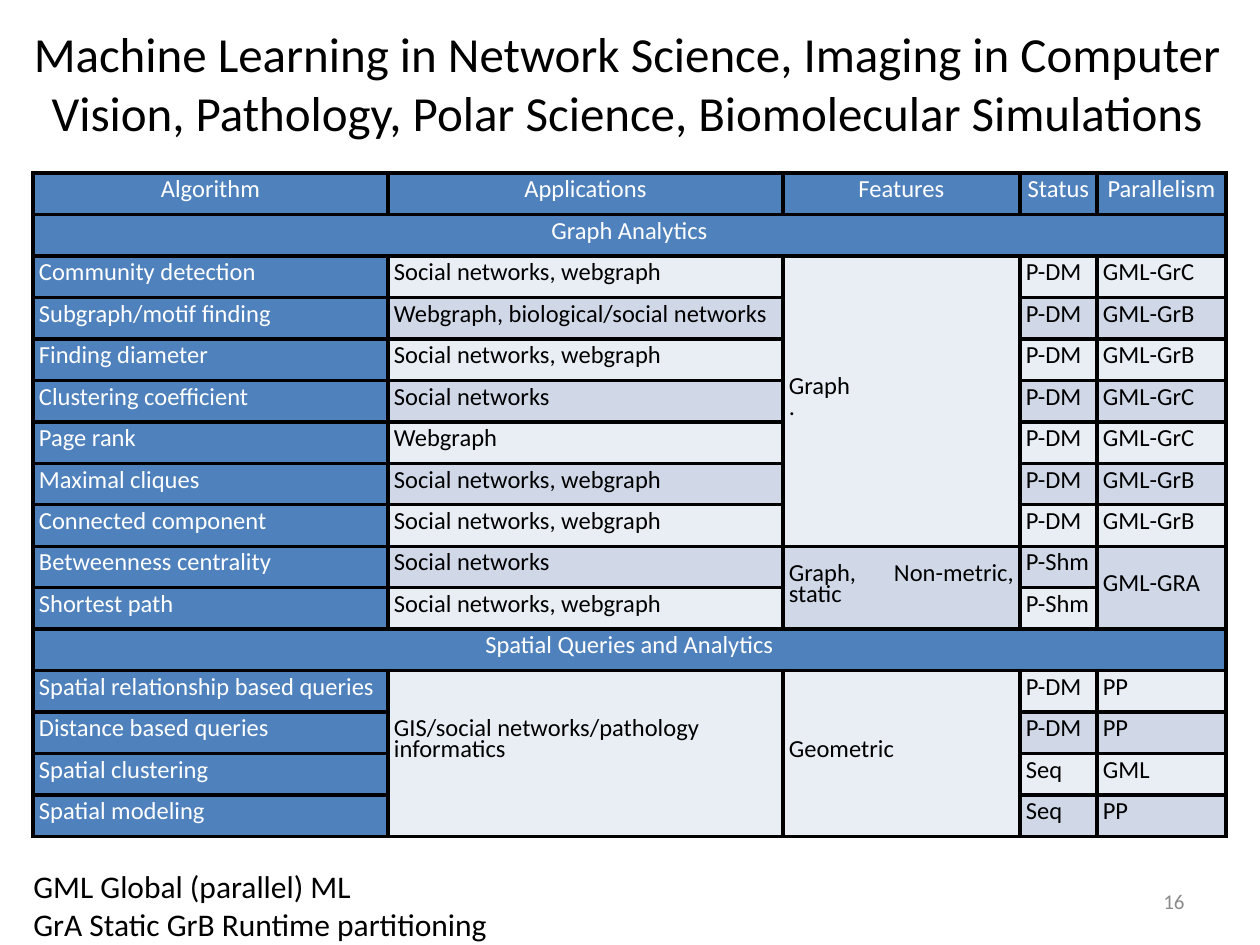
from dataclasses import dataclass

from lxml import etree
from pptx import Presentation
from pptx import util as u
from pptx.dml.color import RGBColor
from pptx.enum import text
from pptx.oxml.ns import qn

LEFT, CENTER, RIGHT, JUSTIFY = (
    text.PP_ALIGN.LEFT, text.PP_ALIGN.CENTER, text.PP_ALIGN.RIGHT, text.PP_ALIGN.JUSTIFY)
TOP, MIDDLE = text.MSO_ANCHOR.TOP, text.MSO_ANCHOR.MIDDLE


@dataclass(frozen=True)
class Theme:
    font: str = "Calibri"
    ink: str = "000000"
    white: str = "FFFFFF"
    muted: str = "8C8C8C"
    head: str = "4F81BD"
    bands: tuple = ("E9EDF4", "D0D8E8")
    title: int = 28
    legend: int = 18
    cell: int = 14
    number: int = 12
    leading: int = 12
    border: float = 2.25


T = Theme()

COLUMNS = [355, 395, 237, 77, 129]
HEADINGS = ["Algorithm", "Applications", "Features", "Status", "Parallelism"]
SOCIAL_WEB = "Social networks, webgraph"
ROWS = [
    HEADINGS,
    ["Graph Analytics"],
    ["Community detection", SOCIAL_WEB, "Graph\n.", "P-DM", "GML-GrC"],
    ["Subgraph/motif finding", "Webgraph, biological/social networks", "", "P-DM", "GML-GrB"],
    ["Finding diameter", SOCIAL_WEB, "", "P-DM", "GML-GrB"],
    ["Clustering coefficient", "Social networks", "", "P-DM", "GML-GrC"],
    ["Page rank", "Webgraph", "", "P-DM", "GML-GrC"],
    ["Maximal cliques", SOCIAL_WEB, "", "P-DM", "GML-GrB"],
    ["Connected component", SOCIAL_WEB, "", "P-DM", "GML-GrB"],
    ["Betweenness centrality", "Social networks", "Graph, Non-metric, static", "P-Shm", "GML-GRA"],
    ["Shortest path", SOCIAL_WEB, "", "P-Shm", ""],
    ["Spatial Queries and Analytics"],
    ["Spatial relationship based queries", "GIS/social networks/pathology informatics",
     "Geometric", "P-DM", "PP"],
    ["Distance based queries", "", "", "P-DM", "PP"],
    ["Spatial clustering", "", "", "Seq", "GML"],
    ["Spatial modeling", "", "", "Seq", "PP"],
]
ROW_SPANS = {(2, 2): 7, (9, 2): 2, (9, 4): 2, (12, 1): 4, (12, 2): 4}
APPLICATIONS_CELL = (12, 1)


def px(n):
    return u.Emu(round(n * 914400 / 126))


def write(tf, words, size, color, align, leading=None):
    for i, line in enumerate(words.split("\n")):
        p = tf.paragraphs[0] if i == 0 else tf.add_paragraph()
        p.text = line
        p.alignment = align
        if leading:
            p.line_spacing = u.Pt(leading)
        p.font.name = T.font
        p.font.size = u.Pt(size)
        p.font.bold = False
        p.font.color.rgb = RGBColor.from_string(color)


def text_box(s, box, words, size, color, align, anchor):
    tf = s.shapes.add_textbox(*map(px, box)).text_frame
    tf.word_wrap = True
    tf.vertical_anchor = anchor
    write(tf, words, size, color, align)


def set_borders(cell):
    tc_pr = cell._tc.get_or_add_tcPr()
    for side in ("a:lnL", "a:lnR", "a:lnT", "a:lnB"):
        ln = etree.SubElement(tc_pr, qn(side), w=str(u.Pt(T.border)))
        fill = etree.SubElement(ln, qn("a:solidFill"))
        etree.SubElement(fill, qn("a:srgbClr"), val=T.ink)


def style_cell(cell, fill):
    set_borders(cell)
    cell.fill.solid()
    cell.fill.fore_color.rgb = RGBColor.from_string(fill)
    cell.vertical_anchor = MIDDLE
    cell.margin_left = cell.margin_right = cell.margin_top = cell.margin_bottom = px(6)


def algorithm_table(s, box):
    x, y, w, h = box
    table = s.shapes.add_table(len(ROWS), len(COLUMNS), *map(px, box)).table
    table.first_row = table.horz_banding = False
    for column, width in zip(table.columns, COLUMNS):
        column.width = px(width)
    for row in table.rows:
        row.height = px(h / len(ROWS))

    for r, values in enumerate(ROWS):
        section = len(values) == 1
        for c in range(len(COLUMNS)):
            cell = table.cell(r, c)
            head = r == 0 or section or c == 0
            style_cell(cell, T.head if head else T.bands[r % 2])
            if c < len(values) and values[c]:
                align = CENTER if r == 0 or section else JUSTIFY
                if (r, c) == APPLICATIONS_CELL:
                    align = LEFT
                    cell.margin_bottom = px(27)
                write(cell.text_frame, values[c], T.cell,
                      T.white if head else T.ink, align, T.leading)
        if section:
            table.cell(r, 0).merge(table.cell(r, len(COLUMNS) - 1))
    for (r, c), span in ROW_SPANS.items():
        table.cell(r, c).merge(table.cell(r + span - 1, c))


def main():
    prs = Presentation()
    prs.slide_width, prs.slide_height = px(1260), px(945)
    s = prs.slides.add_slide(prs.slide_layouts[6])
    text_box(s, (2, 4, 1250, 156),
             "Machine Learning in Network Science, Imaging in Computer Vision, "
             "Pathology, Polar Science, Biomolecular Simulations",
             T.title, T.ink, CENTER, MIDDLE)
    text_box(s, (903, 876, 294, 50), "16", T.number, T.muted, RIGHT, MIDDLE)
    algorithm_table(s, (33, 173, sum(COLUMNS), 664))
    text_box(s, (21, 861, 494, 89),
             "GML Global (parallel) ML\nGrA Static GrB Runtime partitioning",
             T.legend, T.ink, LEFT, TOP)
    prs.save("out.pptx")


if __name__ == "__main__":
    main()
